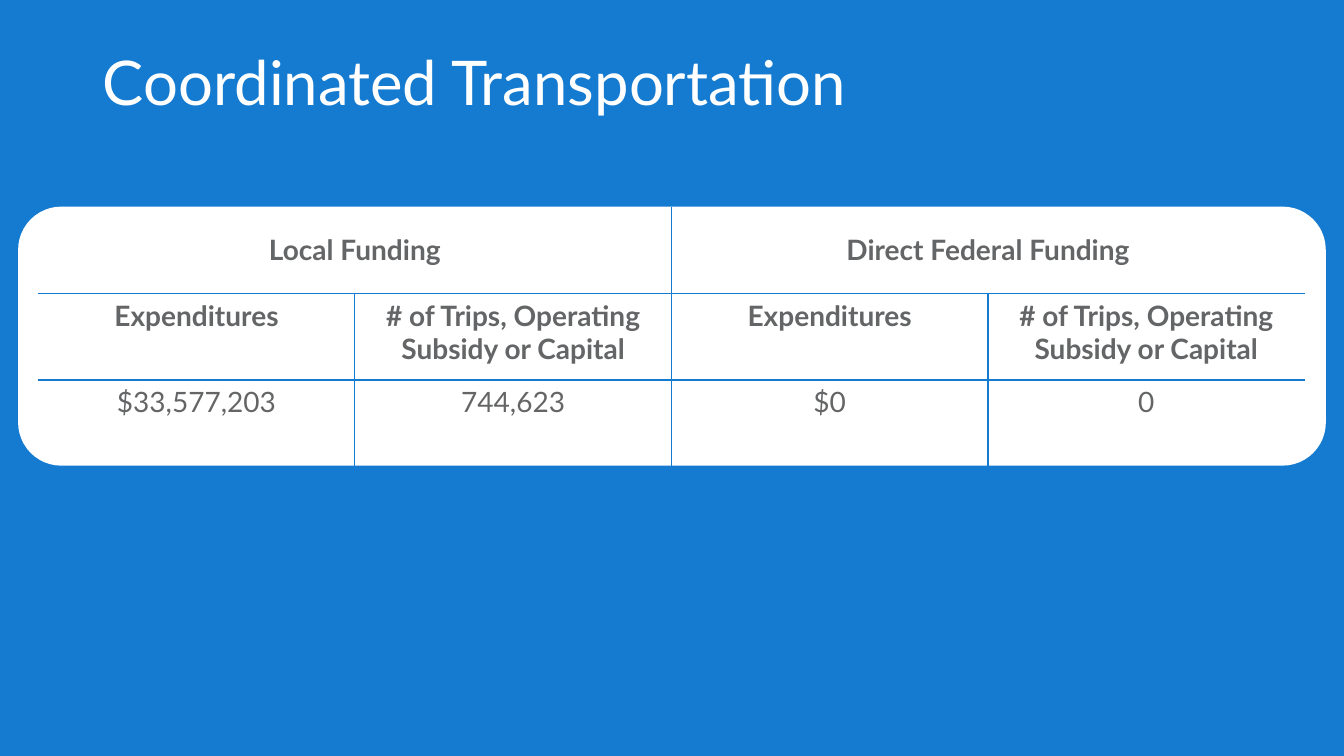
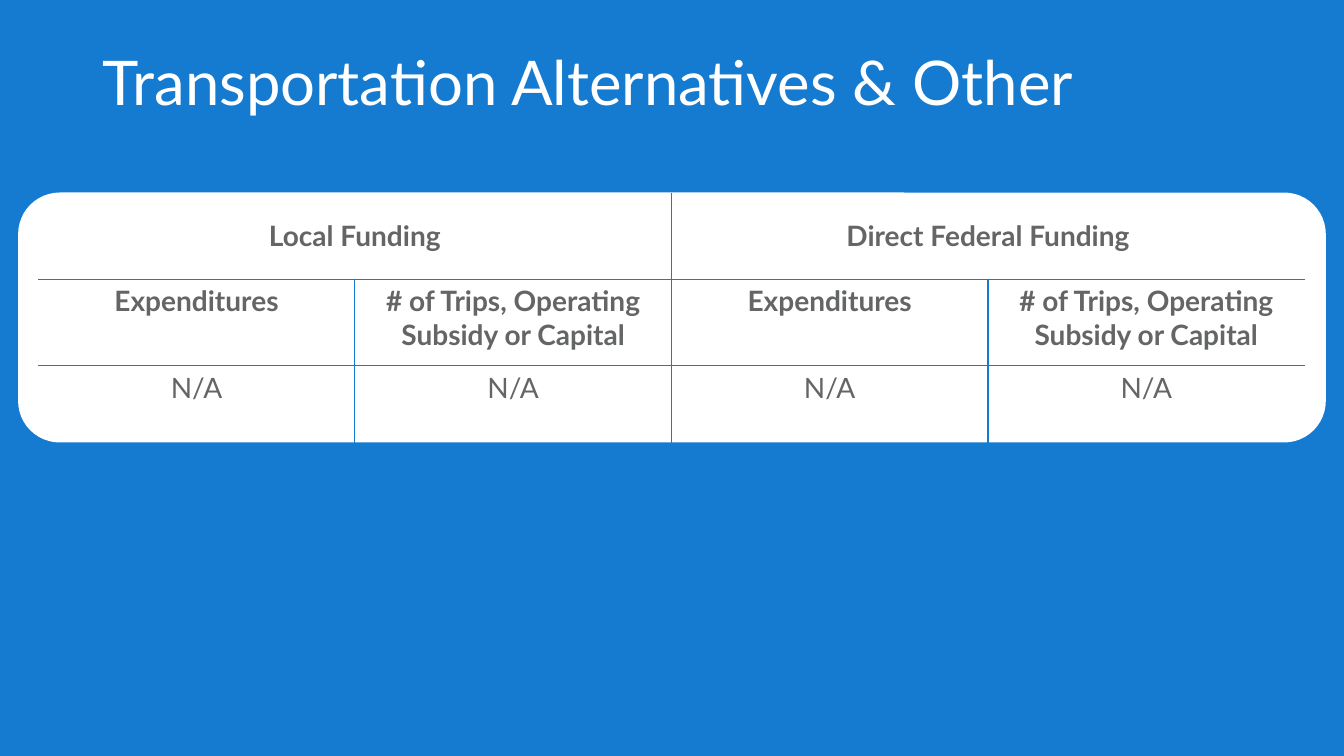
import pptx
import pptx.dml.color
import pptx.enum.shapes
import pptx.enum.text
import pptx.oxml
import pptx.oxml.ns
import pptx.util

Inches = pptx.util.Inches
PP_ALIGN = pptx.enum.text.PP_ALIGN
MSO_ANCHOR = pptx.enum.text.MSO_ANCHOR


def rgb(value):
    return pptx.dml.color.RGBColor.from_string(value)


def write(tf, text, size=20, color="646566", font="Lato", bold=False,
          align=PP_ALIGN.CENTER, anchor=MSO_ANCHOR.TOP, spacing=None):
    tf.text = text
    p = tf.paragraphs[0]
    p.alignment = align
    p.line_spacing = spacing
    r = p.runs[0]
    r.font.size = pptx.util.Pt(size)
    r.font.name = font
    r.font.bold = bold
    r.font.color.rgb = rgb(color)
    tf.vertical_anchor = anchor


class Deck:
    blue = "147BD1"
    white = "FFFFFF"
    column_width = 3.14
    row_height = 0.86

    def __init__(self):
        self.prs = pptx.Presentation()
        self.prs.slide_width = Inches(13.33)
        self.prs.slide_height = Inches(7.5)
        fill = self.prs.slide_master.background.fill
        fill.solid()
        fill.fore_color.rgb = rgb(self.blue)

    def slide(self):
        self.s = self.prs.slides.add_slide(self.prs.slide_layouts[5])

    def title(self, text):
        sp = self.s.shapes.title
        sp.left, sp.top = Inches(0.92), Inches(0.31)
        sp.width, sp.height = Inches(10.57), Inches(1.07)
        tf = sp.text_frame
        tf.auto_size = pptx.enum.text.MSO_AUTO_SIZE.NONE
        write(tf, text, size=44, color=self.white, align=PP_ALIGN.LEFT,
              anchor=MSO_ANCHOR.MIDDLE, spacing=0.9)

    def card(self, top, height):
        sp = self.s.shapes.add_shape(
            pptx.enum.shapes.MSO_SHAPE.ROUNDED_RECTANGLE,
            Inches(0.18), Inches(top), Inches(12.97), Inches(height))
        sp.shadow.inherit = False
        sp.fill.solid()
        sp.fill.fore_color.rgb = rgb(self.white)
        sp.line.fill.background()

    def borders(self, cell, **sides):
        tcPr = cell._tc.get_or_add_tcPr()
        for i, (side, visible) in enumerate(sides.items()):
            paint = (f'<a:solidFill><a:srgbClr val="{self.blue}"/></a:solidFill>'
                     if visible else "<a:noFill/>")
            ns = pptx.oxml.ns.nsdecls("a")
            tcPr.insert(i, pptx.oxml.parse_xml(
                f'<a:ln{side} {ns} w="12700">{paint}</a:ln{side}>'))

    def table(self, top, groups, headings, values):
        rows = [[groups[0], "", groups[1], ""], headings * 2, values]
        n_rows, n_cols = len(rows), len(values)
        table = self.s.shapes.add_table(
            n_rows, n_cols, Inches(0.38), Inches(top),
            Inches(self.column_width * n_cols),
            Inches(self.row_height * n_rows)).table
        table.first_row = table.horz_banding = False
        for row in table.rows:
            row.height = Inches(self.row_height)
        for column in table.columns:
            column.width = Inches(self.column_width)
        for left in (0, 2):
            table.cell(0, left).merge(table.cell(0, left + 1))
        for i, row in enumerate(rows):
            for j, text in enumerate(row):
                cell = table.cell(i, j)
                cell.fill.background()
                if text:
                    write(cell.text_frame, text, bold=i < 2)
                if i == 0:
                    cell.vertical_anchor = MSO_ANCHOR.MIDDLE
                self.borders(cell,
                             L=j > 0 if i else j == 2,
                             R=j < n_cols - 1 if i else j < 2,
                             T=i > 0,
                             B=i < n_rows - 1)

    def funding(self, title, top, card_height, values):
        self.slide()
        self.title(title)
        self.card(top, card_height)
        self.table(top, ["Local Funding", "Direct Federal Funding"],
                   ["Expenditures", "# of Trips, Operating Subsidy or Capital"],
                   values)


def main():
    deck = Deck()
    deck.funding("Coordinated Transportation", 2.05, 2.57,
                 ["$33,577,203", "744,623", "$0", "0"])
    deck.funding("Transportation Alternatives & Other", 1.91, 2.48, ["N/A"] * 4)
    deck.prs.save("out.pptx")


if __name__ == "__main__":
    main()
